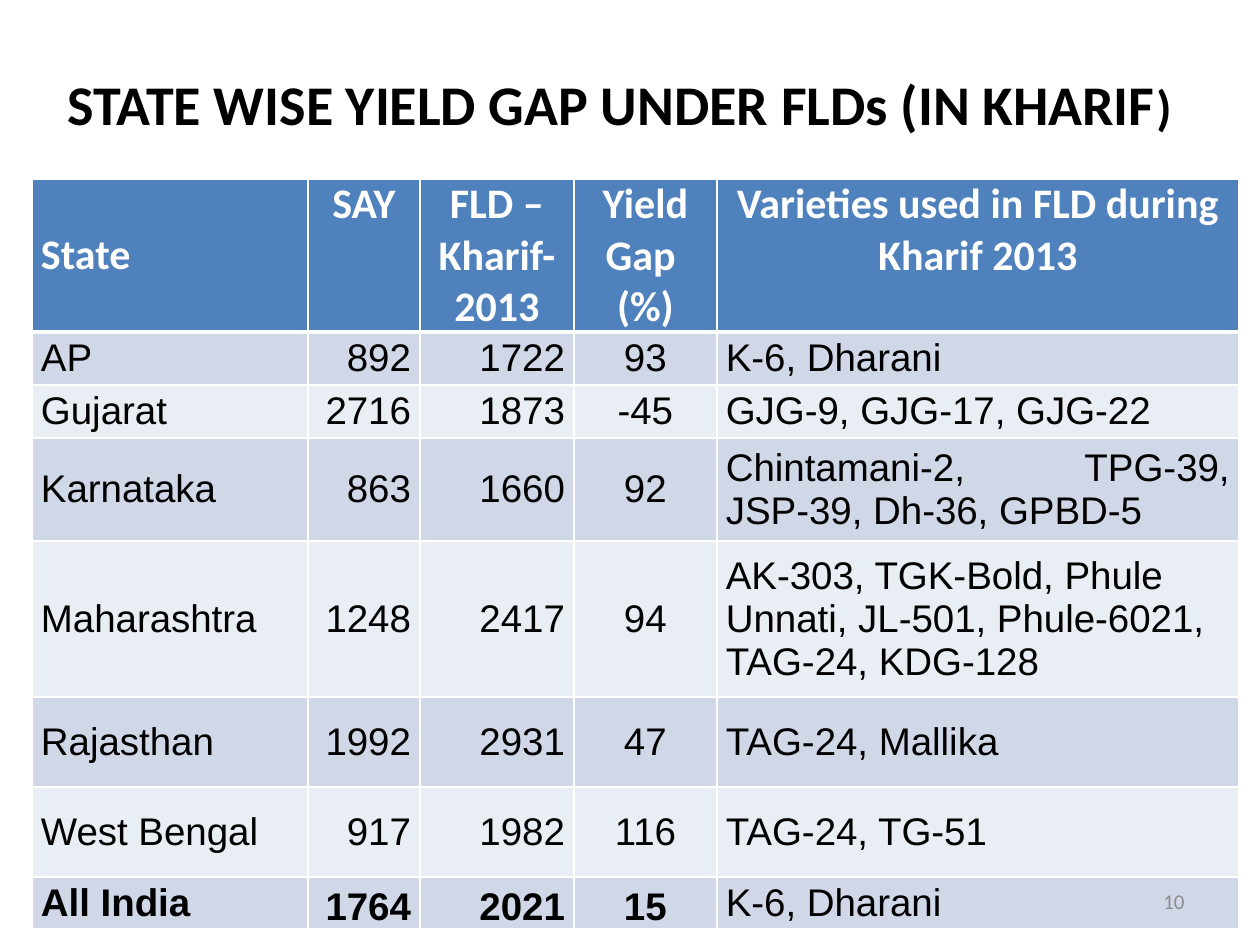
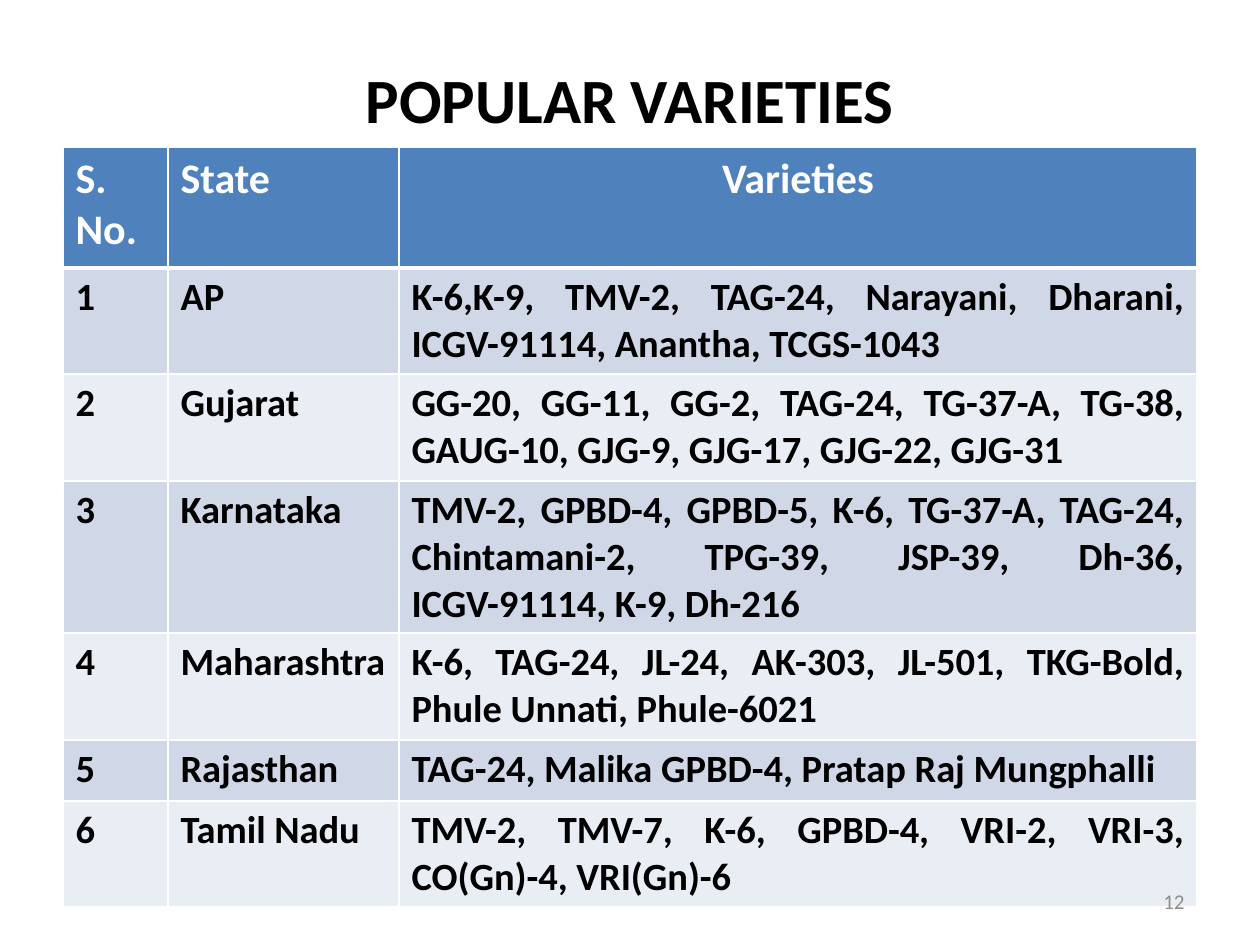
import pptx
import pptx.dml.color
import pptx.enum.text
import pptx.oxml.ns
import pptx.util
from lxml import etree

RGBColor = pptx.dml.color.RGBColor
ALIGN = pptx.enum.text.PP_ALIGN
ANCHOR = pptx.enum.text.MSO_ANCHOR

PX_PER_INCH = 126
WHITE = RGBColor(0xFF, 0xFF, 0xFF)
BLACK = RGBColor(0x00, 0x00, 0x00)
GREY = RGBColor(0x8C, 0x8C, 0x8C)
HEADER_BLUE = RGBColor(0x4F, 0x81, 0xBD)
BANDS = (RGBColor(0xD0, 0xD8, 0xE8), RGBColor(0xE9, 0xED, 0xF4))

HEADER_FONT = {"name": "Calibri", "size": 24, "bold": True, "color": WHITE}
NUMBER_FONT = {"name": "Calibri", "size": 12, "bold": False, "color": GREY}
NUMBER_BOX = (903, 876, 294, 50)
THIN, THICK = 1, 3

YIELD_ROWS = [
    ["State", "SAY", "FLD – Kharif-2013", "Yield Gap \n(%)",
     "Varieties used in FLD during Kharif 2013"],
    ["AP", "892", "1722", "93", "K-6, Dharani"],
    ["Gujarat", "2716", "1873", "-45", "GJG-9, GJG-17, GJG-22"],
    ["Karnataka", "863", "1660", "92",
     "Chintamani-2, TPG-39, JSP-39, Dh-36, GPBD-5"],
    ["Maharashtra", "1248", "2417", "94",
     "AK-303, TGK-Bold, Phule Unnati, JL-501, Phule-6021, TAG-24, KDG-128"],
    ["Rajasthan", "1992", "2931", "47", "TAG-24, Mallika"],
    ["West Bengal", "917", "1982", "116", "TAG-24, TG-51"],
    ["All India", "1764", "2021", "15", "K-6, Dharani"],
]
JUSTIFIED_YIELD_ROWS = (1, 3, 7)

VARIETY_ROWS = [
    ["S.\nNo.", "State", "Varieties"],
    ["1", "AP", "K-6,K-9, TMV-2, TAG-24, Narayani, Dharani, ICGV-91114, "
     "Anantha, TCGS-1043"],
    ["2", "Gujarat", "GG-20, GG-11, GG-2, TAG-24, TG-37-A, TG-38, GAUG-10, "
     "GJG-9, GJG-17, GJG-22, GJG-31"],
    ["3", "Karnataka", "TMV-2, GPBD-4, GPBD-5, K-6, TG-37-A, TAG-24, "
     "Chintamani-2, TPG-39, JSP-39, Dh-36, ICGV-91114, K-9, Dh-216"],
    ["4", "Maharashtra", "K-6, TAG-24, JL-24, AK-303, JL-501, TKG-Bold, "
     "Phule Unnati, Phule-6021"],
    ["5", "Rajasthan", "TAG-24, Malika GPBD-4, Pratap Raj Mungphalli"],
    ["6", "Tamil Nadu", "TMV-2, TMV-7, K-6, GPBD-4, VRI-2, VRI-3, "
     "CO(Gn)-4, VRI(Gn)-6"],
]


def emu(px):
    return pptx.util.Emu(round(px * pptx.util.Inches(1) / PX_PER_INCH))


def style_span(span, font):
    for name, value in font.items():
        if name == "color":
            span.font.color.rgb = value
        else:
            setattr(span.font, name,
                    pptx.util.Pt(value) if name == "size" else value)


def add_text(page, box, spans, align):
    """Add one paragraph of (text, font) spans, centred vertically in box."""
    frame = page.shapes.add_textbox(*map(emu, box)).text_frame
    frame.word_wrap = True
    frame.vertical_anchor = ANCHOR.MIDDLE
    para = frame.paragraphs[0]
    para.alignment = align
    for text, font in spans:
        span = para.add_run()
        span.text = text
        style_span(span, font)


def add_title(page, box, *parts):
    """Add a bold title from (text, size) parts."""
    base = {"name": "Calibri", "bold": True, "color": BLACK}
    spans = [(text, {**base, "size": size}) for text, size in parts]
    add_text(page, box, spans, ALIGN.CENTER)


def add_page_number(page, number):
    add_text(page, NUMBER_BOX, [(str(number), NUMBER_FONT)], ALIGN.RIGHT)


def set_borders(cell, widths):
    """Draw white borders; widths maps the sides L, R, T, B to points."""
    properties = cell._tc.get_or_add_tcPr()
    qn = pptx.oxml.ns.qn
    for side, width in widths.items():
        line = etree.SubElement(properties, qn(f"a:ln{side}"),
                                w=str(pptx.util.Pt(width)))
        fill = etree.SubElement(line, qn("a:solidFill"))
        etree.SubElement(fill, qn("a:srgbClr"), val=str(WHITE))


def fill_cell(cell, text, row, font, align, layout):
    """Write and format a cell; layout holds its anchor and margins."""
    set_borders(cell, {"L": THIN, "R": THIN,
                       "T": THICK if row == 1 else THIN,
                       "B": THICK if row == 0 else THIN})
    cell.fill.solid()
    cell.fill.fore_color.rgb = BANDS[(row - 1) % 2] if row else HEADER_BLUE
    for name, value in layout.items():
        setattr(cell, name, value)
    cell.text_frame.text = text
    for para in cell.text_frame.paragraphs:
        para.alignment = align
        for span in para.runs:
            style_span(span, font)


def add_banded_table(page, corner, widths, heights, rows, cell_format):
    """Add a table; cell_format(row, column) gives font, alignment, layout."""
    box = (*corner, sum(widths), sum(heights))
    table = page.shapes.add_table(len(rows), len(widths),
                                  *map(emu, box)).table
    for column, width in zip(table.columns, widths):
        column.width = emu(width)
    for line, height in zip(table.rows, heights):
        line.height = emu(height)
    for row, texts in enumerate(rows):
        for column, text in enumerate(texts):
            fill_cell(table.cell(row, column), text, row,
                      *cell_format(row, column))


def yield_format(row, column):
    last_row, last_column = len(YIELD_ROWS) - 1, 4
    layout = {"margin_left": emu(9), "margin_right": emu(9),
              "margin_top": 0, "margin_bottom": 0,
              "vertical_anchor": ANCHOR.MIDDLE}
    if row == 0:
        if column:
            layout["vertical_anchor"] = ANCHOR.TOP
        return HEADER_FONT, ALIGN.CENTER if column else ALIGN.LEFT, layout
    if row == last_row and 0 < column < last_column:
        layout["vertical_anchor"] = ANCHOR.BOTTOM
    aligns = [ALIGN.LEFT, ALIGN.RIGHT, ALIGN.RIGHT, ALIGN.CENTER,
              ALIGN.JUSTIFY if row in JUSTIFIED_YIELD_ROWS else ALIGN.LEFT]
    font = {"name": "Arial", "size": 22, "color": BLACK,
            "bold": row == last_row and column < last_column}
    return font, aligns[column], layout


def variety_format(row, column):
    layout = {"vertical_anchor": ANCHOR.TOP}
    if row == 0:
        return HEADER_FONT, ALIGN.CENTER if column == 2 else ALIGN.LEFT, layout
    font = {**HEADER_FONT, "size": 22, "color": BLACK}
    return font, ALIGN.JUSTIFY if column == 2 else ALIGN.LEFT, layout


def add_yield_gap_page(page):
    add_title(page, (21, 38, 1197, 130),
              ("STATE WISE YIELD GAP UNDER FLDs (IN KHARIF", 32), (")", 28))
    add_banded_table(page, (32, 179), [276, 112, 154, 143, 522],
                     [153, 53, 53, 103, 156, 90, 90, 52],
                     YIELD_ROWS, yield_format)
    add_page_number(page, 10)


def add_varieties_page(page):
    add_title(page, (63, 38, 1134, 120), ("POPULAR VARIETIES", 36))
    add_banded_table(page, (63, 147), [105, 231, 798],
                     [121, 106, 107, 152, 107, 61, 106],
                     VARIETY_ROWS, variety_format)
    add_page_number(page, 12)


def main():
    deck = pptx.Presentation()
    deck.slide_width, deck.slide_height = emu(1260), emu(945)
    blank = deck.slide_layouts[6]
    for build in (add_yield_gap_page, add_varieties_page):
        build(deck.slides.add_slide(blank))
    deck.save("out.pptx")


if __name__ == "__main__":
    main()
